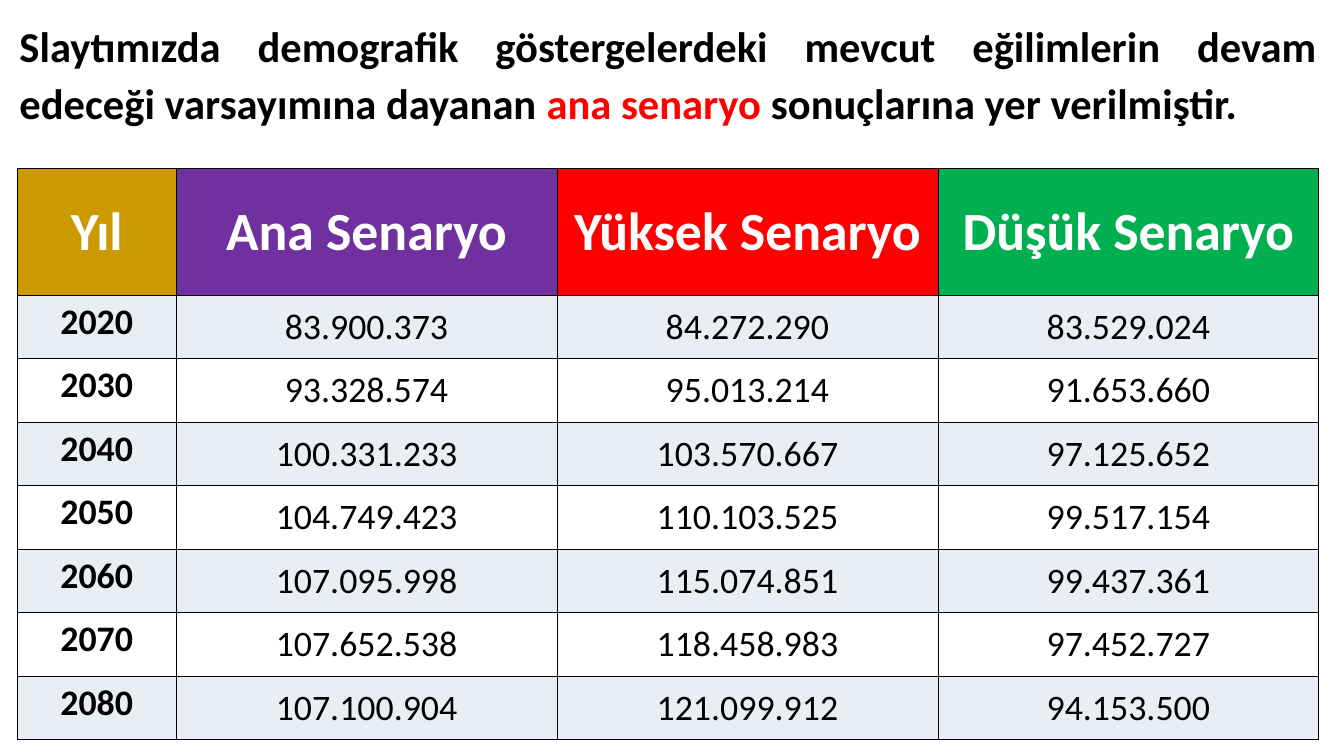
import pptx
import pptx.dml.color
import pptx.enum.text
import pptx.oxml
import pptx.oxml.ns
import pptx.util

Cm, Pt = pptx.util.Cm, pptx.util.Pt
ALIGN = pptx.enum.text.PP_ALIGN
ANCHOR = pptx.enum.text.MSO_ANCHOR
FONT = "Calibri"
COLORS = {
    "text": "000000", "accent": "FF0000", "header_text": "FFFFFF", "border": "000000",
    "year": "CC9900", "main": "7030A0", "high": "FF0000", "low": "00B050",
    "band": "E9EDF4", "plain": "FFFFFF",
}

INTRO = [
    ("Slaytımızda demografik göstergelerdeki mevcut eğilimlerin devam edeceği "
     "varsayımına dayanan ", "text"),
    ("ana senaryo", "accent"),
    (" sonuçlarına yer verilmiştir.", "text"),
]
HEADERS = [("Yıl", "year"), ("Ana Senaryo", "main"),
           ("Yüksek Senaryo", "high"), ("Düşük Senaryo", "low")]
PROJECTIONS = [
    ("2020", "83.900.373", "84.272.290", "83.529.024"),
    ("2030", "93.328.574", "95.013.214", "91.653.660"),
    ("2040", "100.331.233", "103.570.667", "97.125.652"),
    ("2050", "104.749.423", "110.103.525", "99.517.154"),
    ("2060", "107.095.998", "115.074.851", "99.437.361"),
    ("2070", "107.652.538", "118.458.983", "97.452.727"),
    ("2080", "107.100.904", "121.099.912", "94.153.500"),
]


def rgb(color):
    return pptx.dml.color.RGBColor.from_string(COLORS[color])


def set_font(font, size, bold):
    font.name, font.size, font.bold = FONT, Pt(size), bold


def add_intro(slide, left, top, width, height):
    intro = slide.shapes.title
    intro.left, intro.top, intro.width, intro.height = left, top, width, height
    frame = intro.text_frame
    frame.word_wrap = True
    frame.auto_size = pptx.enum.text.MSO_AUTO_SIZE.NONE
    frame.vertical_anchor = ANCHOR.TOP
    sentence = frame.paragraphs[0]
    sentence.alignment = ALIGN.JUSTIFY
    sentence.line_spacing = Pt(51)
    set_font(sentence.font, 38, True)
    for words, color in INTRO:
        run = sentence.add_run()
        run.text = words
        run.font.color.rgb = rgb(color)


def add_borders(cell):
    """Draw a thin solid line on all four sides; call before filling the cell."""
    properties = cell._tc.get_or_add_tcPr()
    for side in ("lnL", "lnR", "lnT", "lnB"):
        properties.append(pptx.oxml.parse_xml(
            f'<a:{side} {pptx.oxml.ns.nsdecls("a")} w="{Pt(1)}"><a:solidFill>'
            f'<a:srgbClr val="{COLORS["border"]}"/></a:solidFill></a:{side}>'))


def format_cell(cell, text, fill, color, size, bold, anchor):
    add_borders(cell)
    cell.fill.solid()
    cell.fill.fore_color.rgb = rgb(fill)
    cell.margin_left = cell.margin_right = Cm(0.43)
    cell.margin_top = cell.margin_bottom = Cm(0.15)
    cell.vertical_anchor = anchor
    cell.text = text
    paragraph = cell.text_frame.paragraphs[0]
    paragraph.alignment = ALIGN.CENTER
    set_font(paragraph.font, size, bold)
    paragraph.font.color.rgb = rgb(color)


def add_projection_table(slide, left, top, width, height):
    row_count = len(PROJECTIONS) + 1
    table = slide.shapes.add_table(row_count, len(HEADERS), left, top, width, height).table

    year_width = Cm(5)
    scenario_width = (width - year_width) // (len(HEADERS) - 1)
    for index, column in enumerate(table.columns):
        column.width = scenario_width if index else year_width
    # The header is twice as tall as a data row.
    row_height = height // (row_count + 1)
    for index, row in enumerate(table.rows):
        row.height = row_height if index else 2 * row_height

    for column, (label, fill) in enumerate(HEADERS):
        format_cell(table.cell(0, column), label, fill, "header_text", 48, True, ANCHOR.MIDDLE)
    for row, values in enumerate(PROJECTIONS, start=1):
        fill = "band" if row % 2 else "plain"
        for column, value in enumerate(values):
            is_year = column == 0
            format_cell(table.cell(row, column), value, fill, "text", 32, is_year,
                        ANCHOR.TOP if is_year else ANCHOR.MIDDLE)


def main():
    presentation = pptx.Presentation()
    presentation.slide_width, presentation.slide_height = Cm(42.34), Cm(23.82)
    slide = presentation.slides.add_slide(presentation.slide_layouts.get_by_name("Title Only"))
    add_intro(slide, Cm(0.36), Cm(0.3), Cm(41.4), Cm(3.78))
    add_projection_table(slide, Cm(0.55), Cm(5.31), Cm(41), Cm(18))
    presentation.save("out.pptx")


if __name__ == "__main__":
    main()
